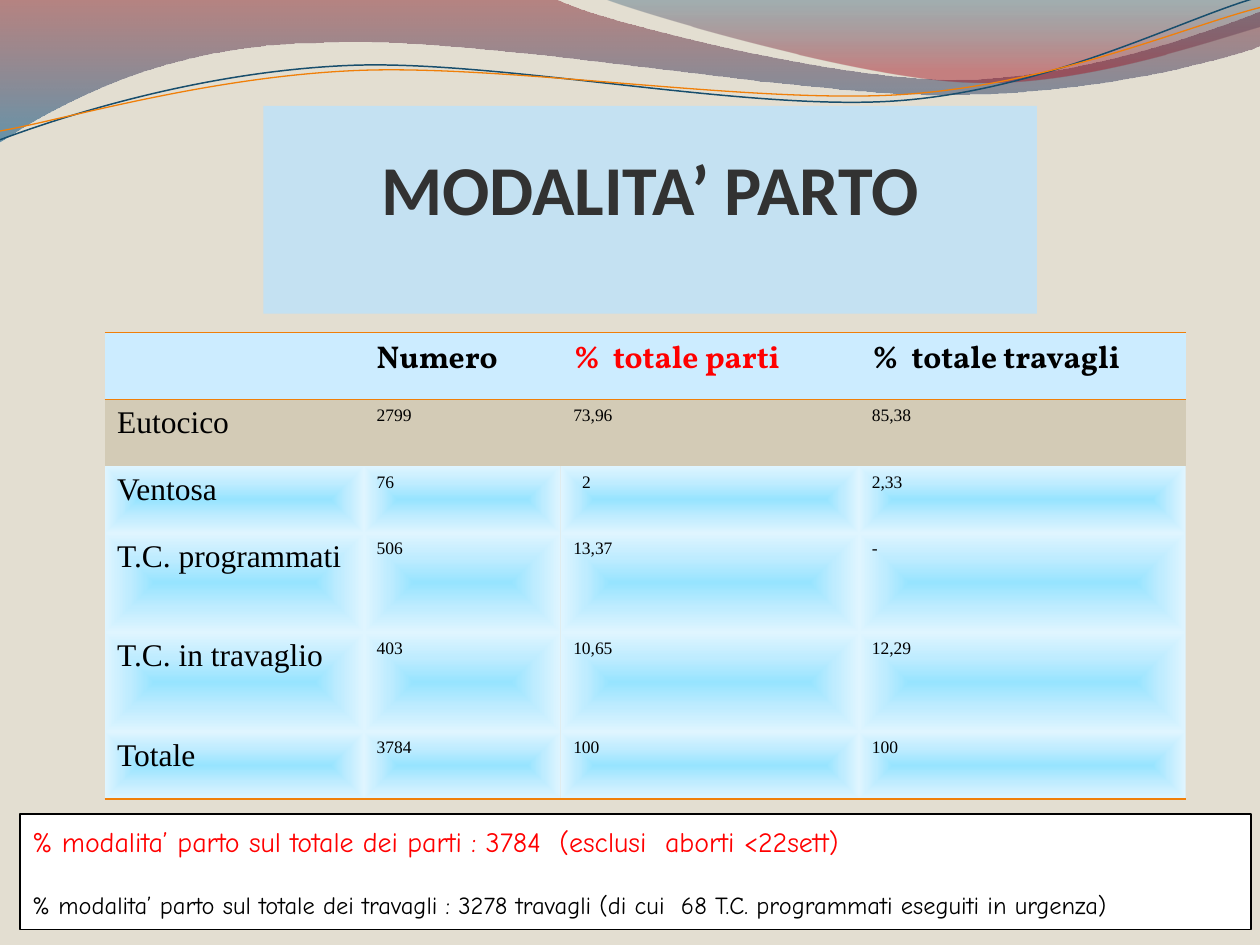
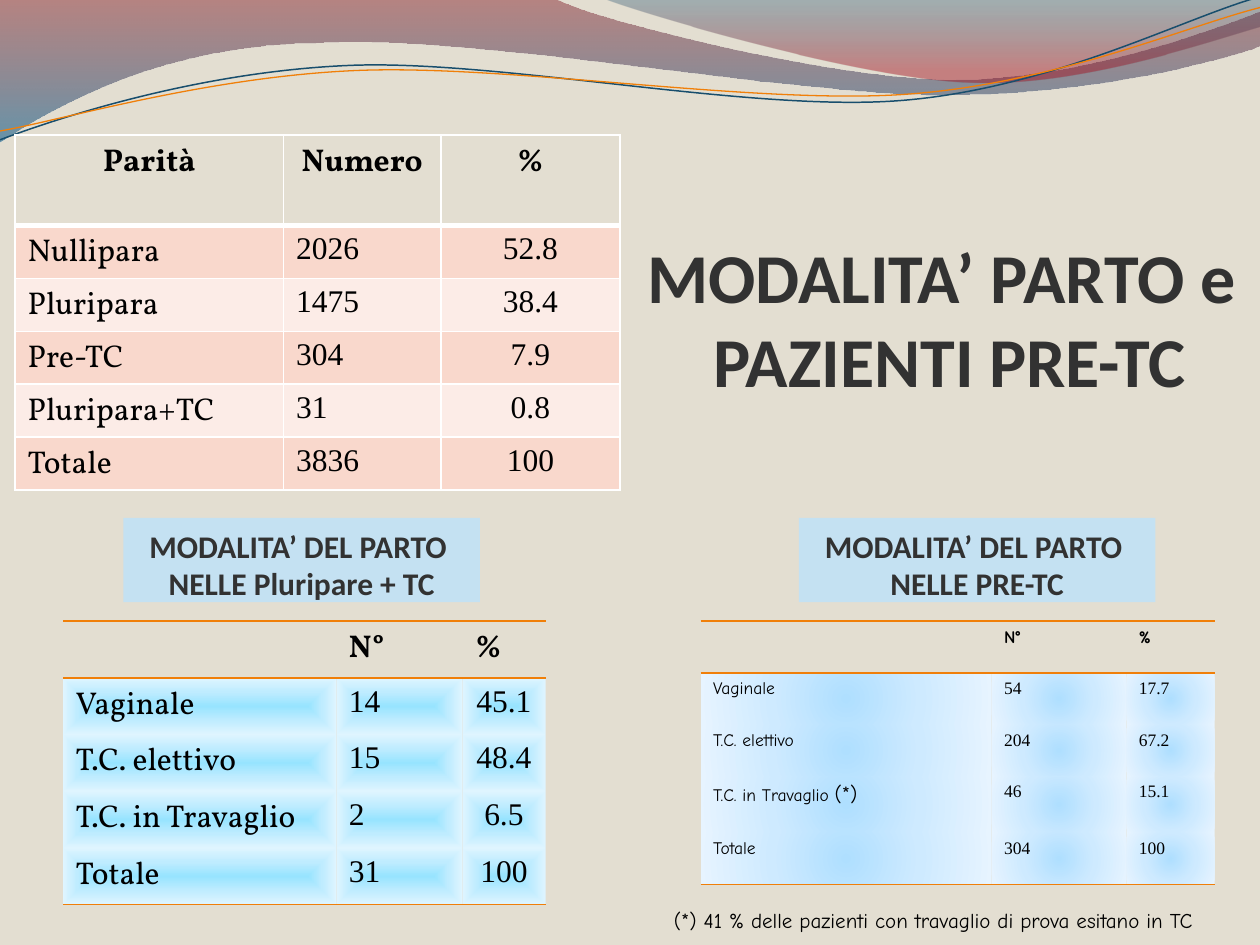
from lxml import etree
from pptx import Presentation
from pptx import util as u
from pptx.dml.color import RGBColor
from pptx.enum import shapes, text
from pptx.oxml.ns import qn

BEIGE = RGBColor(0xE3, 0xDE, 0xD1)
SAND = RGBColor(0xD3, 0xCB, 0xB6)
ICE = RGBColor(0xCC, 0xEC, 0xFF)
PALE_BLUE = RGBColor(0xC4, 0xE1, 0xF2)
ROSE = RGBColor(0xF9, 0xD8, 0xCC)
LIGHT_ROSE = RGBColor(0xFC, 0xEC, 0xE7)
ORANGE = RGBColor(0xF0, 0x7F, 0x09)
NAVY = RGBColor(0x18, 0x4E, 0x6D)
DARK_BLUE = RGBColor(0x09, 0x44, 0x67)
BLUE = RGBColor(0x00, 0x56, 0x89)
MAROON = RGBColor(0x7E, 0x16, 0x21)
CRIMSON = RGBColor(0xA1, 0x0F, 0x1F)
GREY = RGBColor(0x32, 0x32, 0x32)
RED = RGBColor(0xFF, 0, 0)
BLACK = RGBColor(0, 0, 0)
WHITE = RGBColor(0xFF, 0xFF, 0xFF)

# Gradients: shading kind, then (position, colour, opacity) stops
CYAN_GLOW = ("rect", [(0, RGBColor(0x97, 0xE4, 0xFF), 100),
                      (50, RGBColor(0xBF, 0xEC, 0xFF), 100),
                      (100, RGBColor(0xDF, 0xF5, 0xFF), 100)])
SKY_GLOW = ("circle", [(0, RGBColor(0xAF, 0xDF, 0xFF), 100),
                       (50, RGBColor(0xCE, 0xEA, 0xFF), 100),
                       (100, RGBColor(0xE7, 0xF4, 0xFF), 100)])
LEFT_WAVE = ("down", [(0, MAROON, 45), (100, BLUE, 55)])
RIGHT_WAVE = ("down", [(0, DARK_BLUE, 30), (80, CRIMSON, 45)])

TITLE_FONT, SERIF, TIMES, COMIC = "Calibri", "Vollkorn", "Times New Roman", "Comic Neue"
CENTER, LEFT = text.PP_ALIGN.CENTER, text.PP_ALIGN.LEFT
NO_STYLE = "{2D5ABB26-0587-4C30-8999-92F81FD0307C}"


def gradient(kind, stops):
    grad = etree.Element(qn("a:gradFill"), rotWithShape="1")
    gs_list = etree.SubElement(grad, qn("a:gsLst"))
    for pos, color, opacity in stops:
        gs = etree.SubElement(gs_list, qn("a:gs"), pos=str(pos * 1000))
        clr = etree.SubElement(gs, qn("a:srgbClr"), val=str(color))
        if opacity < 100:
            etree.SubElement(clr, qn("a:alpha"), val=str(opacity * 1000))
    if kind == "down":
        etree.SubElement(grad, qn("a:lin"), ang="5400000", scaled="0")
    else:
        shade = etree.SubElement(grad, qn("a:path"), path=kind)
        etree.SubElement(shade, qn("a:fillToRect"), dict.fromkeys("ltrb", "50000"))
    return grad


def add_grid(s, at, cols, rows, data, fills, fonts, sizes, aligns, head_aligns, boxed=False):
    """fonts: header, labels, numbers; sizes: the same three."""
    tbl = s.shapes.add_table(len(rows), len(cols), u.Inches(at[0]), u.Inches(at[1]),
                             u.Inches(sum(cols)), u.Inches(sum(rows))).table
    tbl._tbl.tblPr.find(qn("a:tableStyleId")).text = NO_STYLE
    tbl.horz_banding = False
    for col, width in zip(tbl.columns, cols):
        col.width = u.Inches(width)
    for i, height in enumerate(rows):
        tbl.rows[i].height = u.Inches(height)
        for j, value in enumerate(data[i]):
            cell = tbl.cell(i, j)
            p = cell.text_frame.paragraphs[0]
            p.text = value
            p.alignment = head_aligns[j] if i == 0 else aligns[j]
            part = 0 if i == 0 else min(j, 1) + 1
            p.font.name, p.font.size = fonts[part], u.Pt(sizes[part])
            p.font.bold, p.font.color.rgb = i == 0, BLACK
            # Borders come before the fill; width 0 means none
            if boxed:
                cell.margin_bottom = u.Inches(0.01)
                edges = {"L": 1, "R": 1, "T": 3 if i == 1 else 1, "B": 3 if i == 0 else 1}
            else:
                edges = {"L": 0, "R": 0, "T": int(i < 2), "B": int(i in (0, len(rows) - 1))}
            tc_pr = cell._tc.get_or_add_tcPr()
            for side, width in edges.items():
                ln = etree.SubElement(tc_pr, qn("a:ln" + side), w=str(u.Pt(width)))
                if width:
                    solid = etree.SubElement(ln, qn("a:solidFill"))
                    etree.SubElement(solid, qn("a:srgbClr"), val=str(WHITE if boxed else ORANGE))
                else:
                    etree.SubElement(ln, qn("a:noFill"))
            if fills[i] is None:
                cell.fill.background()
            elif isinstance(fills[i], RGBColor):
                cell.fill.solid()
                cell.fill.fore_color.rgb = fills[i]
            else:
                tc_pr.append(gradient(*fills[i]))
    return tbl


prs = Presentation()
prs.slide_width, prs.slide_height = u.Inches(10), u.Inches(7.5)
master = prs.slide_master
master.background.fill.solid()
master.background.fill.fore_color.rgb = BEIGE
s1, s2 = [prs.slides.add_slide(prs.slide_layouts[5]) for _ in range(2)]

# Waves on the master: start point, then straight (2 numbers) or curved (6) segments
waves = [
    (LEFT_WAVE, None, 0, (0, -0.01), [
        (4.4, -0.01), (4.76, 0.17, 6.64, 0.63, 7.58, 0.63), (8.53, 0.63, 9.58, 0.26, 10, 0.09),
        (10.01, 0.36), (9.83, 0.44, 8.7, 0.76, 7.46, 0.75), (6.22, 0.75, 3.82, 0.28, 2.57, 0.34),
        (1.29, 0.35, 0.46, 0.83, -0.01, 1.13)]),
    (RIGHT_WAVE, None, 0, (4.79, -0.01), [
        (5.09, 0.11, 6.82, 0.62, 7.69, 0.65), (8.56, 0.69, 9.61, 0.32, 10, 0.21), (10, 0)]),
    (None, NAVY, 0.85, (0, 1.11), [
        (0.48, 0.93, 1.58, 0.57, 2.77, 0.52), (3.95, 0.47, 5.93, 0.89, 7.13, 0.8),
        (8.33, 0.71, 9.38, 0.15, 9.98, -0.02)]),
    (None, ORANGE, 0.75, (0, 1.04), [
        (0.47, 0.96, 1.64, 0.61, 2.83, 0.56), (4.03, 0.51, 5.97, 0.83, 7.17, 0.75),
        (8.36, 0.67, 9.41, 0.21, 10, 0.06)]),
]
for n, (fill, line, weight, start, segments) in enumerate(waves):
    builder = s1.shapes.build_freeform(u.Inches(start[0]), u.Inches(start[1]), scale=1.0)
    for seg in segments:
        builder.add_line_segments([(u.Inches(x), u.Inches(y)) for x, y in zip(seg[::2], seg[1::2])],
                                  close=False)
    if fill:
        builder.add_line_segments([], close=True)
    sp = builder.convert_to_shape()
    # Join the three points of each curved segment into one Bezier curve
    steps = iter(list(sp._element.iter(qn("a:lnTo"))))
    for seg in segments:
        group = [next(steps) for _ in range(len(seg) // 2)]
        if len(group) == 3:
            curve = etree.Element(qn("a:cubicBezTo"))
            group[0].addprevious(curve)
            for step in group:
                curve.append(step[0])
                step.getparent().remove(step)
    sp.shadow.inherit = False
    if fill:
        sp.line.fill.background()
        sp._element.spPr.find(qn("a:custGeom")).addnext(gradient(*fill))
    else:
        sp.fill.background()
        sp.line.color.rgb, sp.line.width = line, u.Pt(weight)
    master.shapes._spTree.insert(2 + n, sp._element)

# Titles and subtitles: slide, is title, place, size, bottom inset, fill, paragraphs
headings = [
    (s1, True, (2.09, 0.84, 6.14, 1.65), 40, 0.67, PALE_BLUE, ["MODALITA’ PARTO"]),
    (s2, True, (5.07, 1.7, 4.93, 1.89), 40, 0.4, None, ["MODALITA’ PARTO e ", "PAZIENTI PRE-TC"]),
    (s2, False, (0.98, 4.11, 2.83, 0.67), 18, 0, PALE_BLUE,
     ["MODALITA’ DEL PARTO \vNELLE Pluripare + TC"]),
    (s2, False, (6.34, 4.11, 2.83, 0.67), 18, 0, PALE_BLUE,
     ["MODALITA’ DEL PARTO \vNELLE PRE-TC"]),
]
for s, is_title, place, size, inset, fill, lines in headings:
    box = [u.Inches(v) for v in place]
    sp = s.shapes.title if is_title else s.shapes.add_textbox(*box)
    sp.left, sp.top, sp.width, sp.height = box
    if fill:
        sp.fill.solid()
        sp.fill.fore_color.rgb = fill
    tf = sp.text_frame
    tf.word_wrap, tf.auto_size = True, text.MSO_AUTO_SIZE.NONE
    tf.vertical_anchor = text.MSO_ANCHOR.BOTTOM
    tf.margin_left = tf.margin_right = 0
    tf.margin_top, tf.margin_bottom = u.Inches(0.05), u.Inches(inset)
    for n, line in enumerate(lines):
        p = tf.add_paragraph() if n else tf.paragraphs[0]
        p.text, p.alignment = line, CENTER
        p.font.name, p.font.size = TITLE_FONT, u.Pt(size)
        p.font.bold, p.font.color.rgb = True, GREY

# Slide 1: delivery table
tbl = add_grid(
    s1, (0.83, 2.64), [2.06, 1.56, 2.37, 2.59], [0.53, 0.53, 0.53, 0.79, 0.79, 0.53],
    [["", "Numero", "%  totale parti", "%  totale travagli"],
     ["Eutocico", "2799", "73,96", "85,38"],
     ["Ventosa", "76", "2", "2,33"],
     ["T.C. programmati", "506", "13,37", "-"],
     ["T.C. in travaglio", "403", "10,65", "12,29"],
     ["Totale", "3784", "100", "100"]],
    [ICE, SAND] + [CYAN_GLOW] * 4, (SERIF, TIMES, TIMES), (18, 18, 10), [LEFT] * 4, [LEFT] * 4)
tbl.cell(0, 2).text_frame.paragraphs[0].font.color.rgb = RED
tbl.cell(2, 2).margin_left = u.Inches(0.17)

# Slide 1: note on the percentages
sp = s1.shapes.add_shape(shapes.MSO_SHAPE.RECTANGLE, u.Inches(0.16), u.Inches(6.46),
                         u.Inches(9.77), u.Inches(0.92))
sp.shadow.inherit = False
sp.fill.solid()
sp.fill.fore_color.rgb = WHITE
sp.line.color.rgb, sp.line.width = BLACK, u.Pt(0.75)
tf = sp.text_frame
tf.word_wrap, tf.vertical_anchor = True, text.MSO_ANCHOR.MIDDLE
notes = [
    ("% modalita’ parto sul totale dei parti : 3784  (esclusi  aborti <22sett)", 16, RED),
    ("% modalita’ parto sul totale dei travagli : 3278 travagli "
     "(di cui  68 T.C. programmati eseguiti in urgenza)", 14, BLACK),
]
for n, (note, size, color) in enumerate(notes):
    p = tf.add_paragraph() if n else tf.paragraphs[0]
    p.text, p.alignment = note, LEFT
    if n:
        p.space_before = u.Pt(18)
    p.font.name, p.font.size, p.font.color.rgb = COMIC, u.Pt(size), color

# Slide 2: previous caesarean
tbl = add_grid(
    s2, (5.56, 4.93), [2.31, 1.07, 0.7], [0.41, 0.41, 0.41, 0.45, 0.41],
    [["", "N°", "%"],
     ["Vaginale", "54", "17.7"],
     ["T.C. elettivo", "204", "67.2"],
     ["T.C. in Travaglio ", "46", "15.1"],
     ["Totale", "304", "100"]],
    [None] + [SKY_GLOW] * 4, (COMIC, COMIC, TIMES), (10, 10, 10), [LEFT] * 3, [LEFT] * 3)
r = tbl.cell(3, 0).text_frame.paragraphs[0].add_run()
r.text, r.font.size = "(*)", u.Pt(12)

# Slide 2: multiparous with previous caesarean
add_grid(
    s2, (0.5, 4.93), [2.17, 1, 0.66], [0.45] * 5,
    [["", "N°", "%"],
     ["Vaginale", "14", "45.1"],
     ["T.C. elettivo", "15", "48.4"],
     ["T.C. in Travaglio", "2", "6.5"],
     ["Totale", "31", "100"]],
    [None] + [CYAN_GLOW] * 4, (SERIF, SERIF, TIMES), (18, 18, 18),
    [LEFT, LEFT, CENTER], [LEFT] * 3)

# Slide 2: footnote
tf = s2.shapes.add_textbox(u.Inches(5.25), u.Inches(7.15), u.Inches(4.7), u.Inches(0.3)).text_frame
tf.word_wrap = True
p = tf.paragraphs[0]
p.text = "(*) 41 % delle pazienti con travaglio di prova esitano in TC"
p.font.name, p.font.size, p.font.color.rgb = COMIC, u.Pt(12), BLACK

# Slide 2: parity table
add_grid(
    s2, (0.12, 1.07), [2.13, 1.25, 1.42], [0.72] + [0.42] * 5,
    [["Parità", "Numero", "%"],
     ["Nullipara", "2026", "52.8"],
     ["Pluripara", "1475", "38.4"],
     ["Pre-TC", "304", "7.9"],
     ["Pluripara+TC", "31", "0.8"],
     ["Totale", "3836", "100"]],
    [None, ROSE, LIGHT_ROSE, ROSE, LIGHT_ROSE, ROSE], (SERIF, SERIF, TIMES), (18, 18, 18),
    [LEFT, LEFT, CENTER], [CENTER] * 3, boxed=True)

prs.save("out.pptx")
